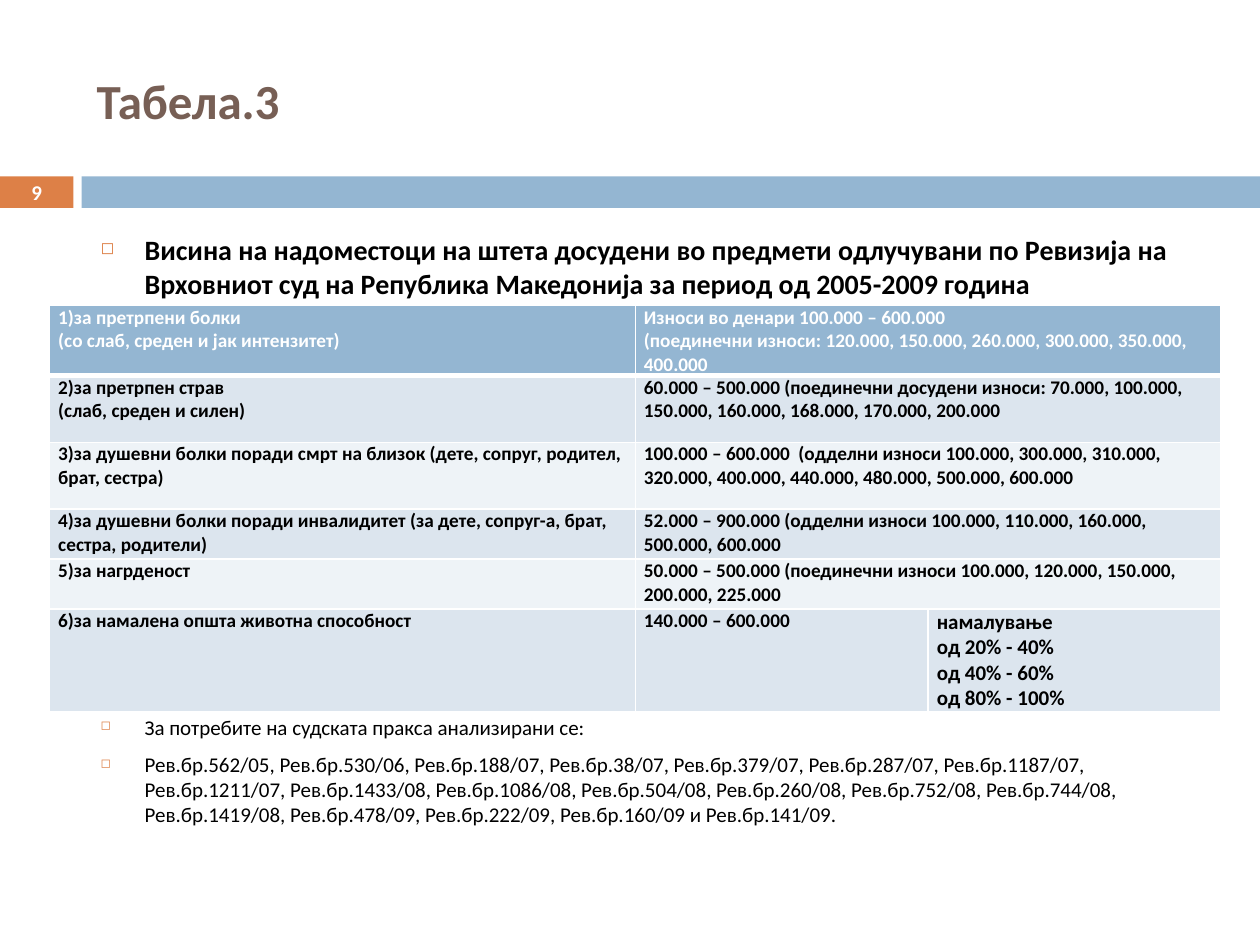
from dataclasses import dataclass

from lxml import etree
from pptx import Presentation
from pptx.dml.color import RGBColor
from pptx.enum import shapes, text
from pptx.oxml import ns
from pptx.util import Pt


@dataclass(frozen=True)
class Theme:
    font: str = "Calibri"
    accent: str = "DD8047"
    blue: str = "94B6D2"
    brown: str = "775F55"
    black: str = "000000"
    white: str = "FFFFFF"
    bands: tuple = ("DCE5EE", "EEF3F7")
    title_size: float = 28
    lead_size: float = 16
    note_size: float = 12
    cell_size: float = 11
    number_size: float = 12


THEME = Theme()

LEAD = ["Висина на надоместоци на штета досудени во предмети одлучувани по Ревизија на "
        "Врховниот суд на Република Македонија за период од 2005-2009 година"]
NOTES = [
    "За потребите на судската пракса анализирани се:",
    "Рев.бр.562/05, Рев.бр.530/06, Рев.бр.188/07, Рев.бр.38/07, Рев.бр.379/07, "
    "Рев.бр.287/07, Рев.бр.1187/07, Рев.бр.1211/07, Рев.бр.1433/08, Рев.бр.1086/08, "
    "Рев.бр.504/08, Рев.бр.260/08, Рев.бр.752/08, Рев.бр.744/08, Рев.бр.1419/08, "
    "Рев.бр.478/09, Рев.бр.222/09, Рев.бр.160/09 и Рев.бр.141/09.",
]
DAMAGES = [
    ("1)за претрпени болки\n(со слаб, среден и јак интензитет)",
     "Износи во денари 100.000 – 600.000\n"
     "(поединечни износи: 120.000, 150.000, 260.000, 300.000, 350.000, 400.000"),
    ("2)за претрпен страв\n(слаб, среден и силен)",
     "60.000 – 500.000 (поединечни досудени износи: 70.000, 100.000, 150.000, 160.000, "
     "168.000, 170.000, 200.000"),
    ("3)за душевни болки поради смрт на близок (дете, сопруг, родител, брат, сестра)",
     "100.000 – 600.000  (одделни износи 100.000, 300.000, 310.000, 320.000, 400.000, "
     "440.000, 480.000, 500.000, 600.000"),
    ("4)за душевни болки поради инвалидитет (за дете, сопруг-а, брат, сестра, родители)",
     "52.000 – 900.000 (одделни износи 100.000, 110.000, 160.000, 500.000, 600.000"),
    ("5)за нагрденост",
     "50.000 – 500.000 (поединечни износи 100.000, 120.000, 150.000, 200.000, 225.000"),
    ("6)за намалена општа животна способност",
     "140.000 – 600.000",
     "намалување\nод 20% - 40%\nод 40% - 60%\nод 80% - 100%"),
]
ROW_HEIGHTS = (40, 38.2, 38.2, 28.6, 28.6, 58.4)
COLUMN_SHARES = (0.5, 0.25, 0.25)


def format_runs(frame, size, color, bold=True):
    for paragraph in frame.paragraphs:
        for run in paragraph.runs:
            run.font.name = THEME.font
            run.font.size = Pt(size)
            run.font.bold = bold
            run.font.color.rgb = RGBColor.from_string(color)


def add_child(parent, tag, **attributes):
    return etree.SubElement(parent, ns.qn(tag), attributes)


def add_label(slide, box, wording, size, color, bold=True):
    frame = slide.shapes.add_textbox(*map(Pt, box)).text_frame
    frame.word_wrap = True
    frame.text = wording
    format_runs(frame, size, color, bold)
    return frame


def add_title(slide, box):
    frame = add_label(slide, box, "Табела.3", THEME.title_size, THEME.brown)
    frame.vertical_anchor = text.MSO_ANCHOR.MIDDLE


def add_band(slide, box):
    left, top, width, height = box
    number_width, gap = 42, 4.6
    bar_left = number_width + gap
    for x, part_width, color in ((left, number_width, THEME.accent),
                                 (left + bar_left, width - bar_left, THEME.blue)):
        bar = slide.shapes.add_shape(shapes.MSO_SHAPE.RECTANGLE,
                                     Pt(x), Pt(top), Pt(part_width), Pt(height))
        bar.shadow.inherit = False
        bar.fill.solid()
        bar.fill.fore_color.rgb = RGBColor.from_string(color)
        bar.line.fill.background()
    number = add_label(slide, (left, top, number_width, height), "9",
                       THEME.number_size, THEME.white)
    number.margin_top = number.margin_bottom = 0
    number.vertical_anchor = text.MSO_ANCHOR.MIDDLE
    number.paragraphs[0].alignment = text.PP_ALIGN.CENTER


def add_bullets(slide, box, items, size, bold):
    frame = add_label(slide, box, "\n".join(items), size, THEME.black, bold)
    indent = Pt(25.2)
    for paragraph in frame.paragraphs:
        paragraph.space_before = Pt(7)
        properties = paragraph._p.get_or_add_pPr()
        properties.set("marL", str(indent))
        properties.set("indent", str(-indent))
        add_child(add_child(properties, "a:buClr"), "a:srgbClr", val=THEME.accent)
        add_child(properties, "a:buSzPct", val="60000")
        add_child(properties, "a:buChar", char="◻")


def set_borders(cell, widths):
    properties = cell._tc.get_or_add_tcPr()
    for position, (side, width) in enumerate(widths.items()):
        border = etree.Element(ns.qn(f"a:ln{side}"), w=str(Pt(width)))
        add_child(add_child(border, "a:solidFill"), "a:srgbClr", val=THEME.white)
        properties.insert(position, border)


def style_cell(cell, row):
    cell.margin_left = cell.margin_right = Pt(4.9)
    cell.margin_top = cell.margin_bottom = 0
    cell.fill.solid()
    fill = THEME.bands[(row - 1) % 2] if row else THEME.blue
    cell.fill.fore_color.rgb = RGBColor.from_string(fill)
    set_borders(cell, {"L": 1, "R": 1, "T": 3 if row == 1 else 1, "B": 1 if row else 3})


def add_damages_table(slide, box):
    table = slide.shapes.add_table(len(DAMAGES), len(COLUMN_SHARES), *map(Pt, box)).table
    for column, share in zip(table.columns, COLUMN_SHARES):
        column.width = Pt(box[2] * share)
    for row, (entries, height) in enumerate(zip(DAMAGES, ROW_HEIGHTS)):
        table.rows[row].height = Pt(height)
        for cell in table.rows[row].cells:
            style_cell(cell, row)
        if len(entries) == 2:
            table.cell(row, 1).merge(table.cell(row, 2))
        for column, wording in enumerate(entries):
            frame = table.cell(row, column).text_frame
            frame.text = wording
            size = THEME.note_size if column == 2 else THEME.cell_size
            format_runs(frame, size, THEME.black if row else THEME.white)


def main():
    deck = Presentation()
    deck.slide_width, deck.slide_height = Pt(720), Pt(540)
    slide = deck.slides.add_slide(deck.slide_layouts[6])
    add_title(slide, (48.2, 18, 642, 78))
    add_band(slide, (0, 100.8, 720, 18))
    add_bullets(slide, (50.4, 129.6, 642, 46), LEAD, THEME.lead_size, True)
    add_damages_table(slide, (28.4, 174.6, 669.4, sum(ROW_HEIGHTS)))
    add_bullets(slide, (50.4, 404.5, 642, 72), NOTES, THEME.note_size, False)
    deck.save("out.pptx")


if __name__ == "__main__":
    main()
